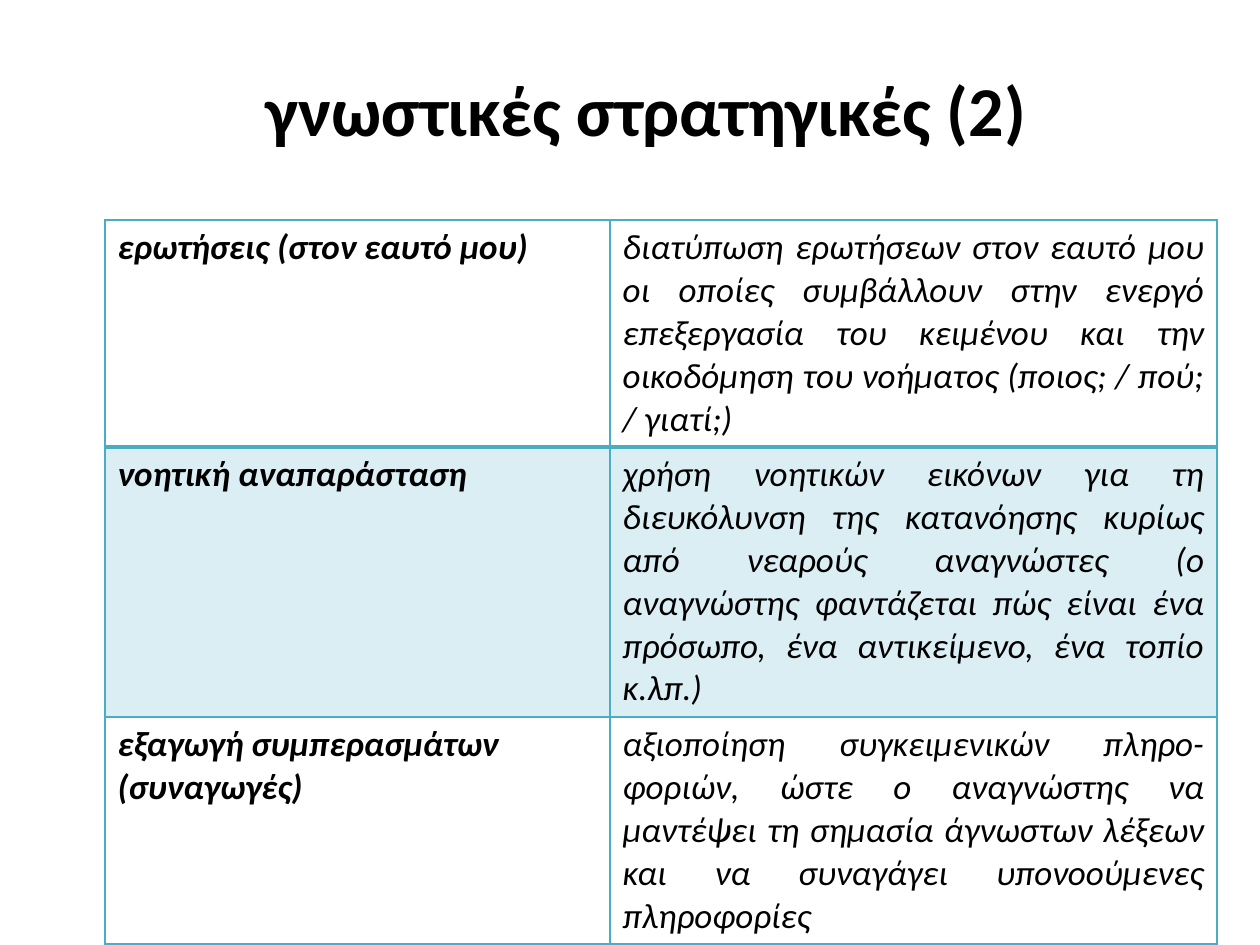
import dataclasses

import pptx
import pptx.dml.color
import pptx.enum.text
import pptx.oxml
import pptx.oxml.ns
import pptx.util

RGB = pptx.dml.color.RGBColor
ALIGN = pptx.enum.text.PP_ALIGN
BLACK = RGB(0x00, 0x00, 0x00)
TEAL = RGB(0x4B, 0xAC, 0xC6)
PALE = RGB(0xDB, 0xEE, 0xF4)
FONT = "Calibri"
SCALE = 914400 / 126  # EMU in one px
COLS = (505, 607)


@dataclasses.dataclass
class Row:
    name: str
    text: str
    high: int
    shade: bool = False
    top: int = 1  # border widths in points
    base: int = 1


ROWS = [
    Row("ερωτήσεις (στον εαυτό μου)",
        "διατύπωση ερωτήσεων στον εαυτό μου οι οποίες συμβάλλουν στην ενεργό "
        "επεξεργασία του κειμένου και την οικοδόμηση του νοήματος "
        "(ποιος; / πού; / γιατί;)", 227, base=2),
    Row("νοητική αναπαράσταση",
        "χρήση νοητικών εικόνων για τη διευκόλυνση της κατανόησης κυρίως από "
        "νεαρούς αναγνώστες (ο αναγνώστης φαντάζεται πώς είναι ένα πρόσωπο, "
        "ένα αντικείμενο, ένα τοπίο κ.λπ.)", 270, shade=True, top=2),
    Row("εξαγωγή συμπερασμάτων (συναγωγές)",
        "αξιοποίηση συγκειμενικών πληρο-φοριών, ώστε ο αναγνώστης να μαντέψει "
        "τη σημασία άγνωστων λέξεων και να συναγάγει υπονοούμενες πληροφορίες",
        227),
]


def px(size: int) -> int:
    return round(size * SCALE)


def write(frame, text: str, size: int, align, bold: bool, slant: bool) -> None:
    para = frame.paragraphs[0]
    para.alignment = align
    run = para.add_run()
    run.text = text
    font = run.font
    font.name, font.size = FONT, pptx.util.Pt(size)
    font.bold, font.italic = bold, slant
    font.color.rgb = BLACK


def edge(cell, row: Row) -> None:
    """Draw the four borders; they must stand before the fill."""
    props = cell._tc.get_or_add_tcPr()
    sides = {"L": 1, "R": 1, "T": row.top, "B": row.base}
    for spot, (side, width) in enumerate(sides.items()):
        props.insert(spot, pptx.oxml.parse_xml(
            f'<a:ln{side} {pptx.oxml.ns.nsdecls("a")} w="{pptx.util.Pt(width)}">'
            f'<a:solidFill><a:srgbClr val="{TEAL}"/></a:solidFill></a:ln{side}>'))


def fill(cell, row: Row) -> None:
    if row.shade:
        cell.fill.solid()
        cell.fill.fore_color.rgb = PALE
    else:
        cell.fill.background()
    edge(cell, row)


def title(slide, text: str) -> None:
    box = slide.shapes.add_textbox(px(84), px(32), px(1124), px(154))
    frame = box.text_frame
    frame.word_wrap = True
    frame.vertical_anchor = pptx.enum.text.MSO_ANCHOR.MIDDLE
    write(frame, text, 40, ALIGN.CENTER, True, False)


def grid(slide, rows: list[Row]) -> None:
    high = sum(row.high for row in rows)
    table = slide.shapes.add_table(len(rows), len(COLS), px(105), px(220),
                                   px(sum(COLS)), px(high)).table
    table.first_row = table.horz_banding = False
    for col, wide in zip(table.columns, COLS):
        col.width = px(wide)
    for line, row in zip(table.rows, rows):
        line.height = px(row.high)
        left, right = line.cells
        write(left.text_frame, row.name, 20, ALIGN.LEFT, True, True)
        write(right.text_frame, row.text, 20, ALIGN.JUSTIFY, False, True)
        fill(left, row)
        fill(right, row)


def main() -> None:
    deck = pptx.Presentation()
    deck.slide_width, deck.slide_height = px(1260), px(945)
    slide = deck.slides.add_slide(deck.slide_layouts[6])
    # Heading
    title(slide, "γνωστικές στρατηγικές (2)")
    # Strategies and what they mean
    grid(slide, ROWS)
    deck.save("out.pptx")


if __name__ == "__main__":
    main()
